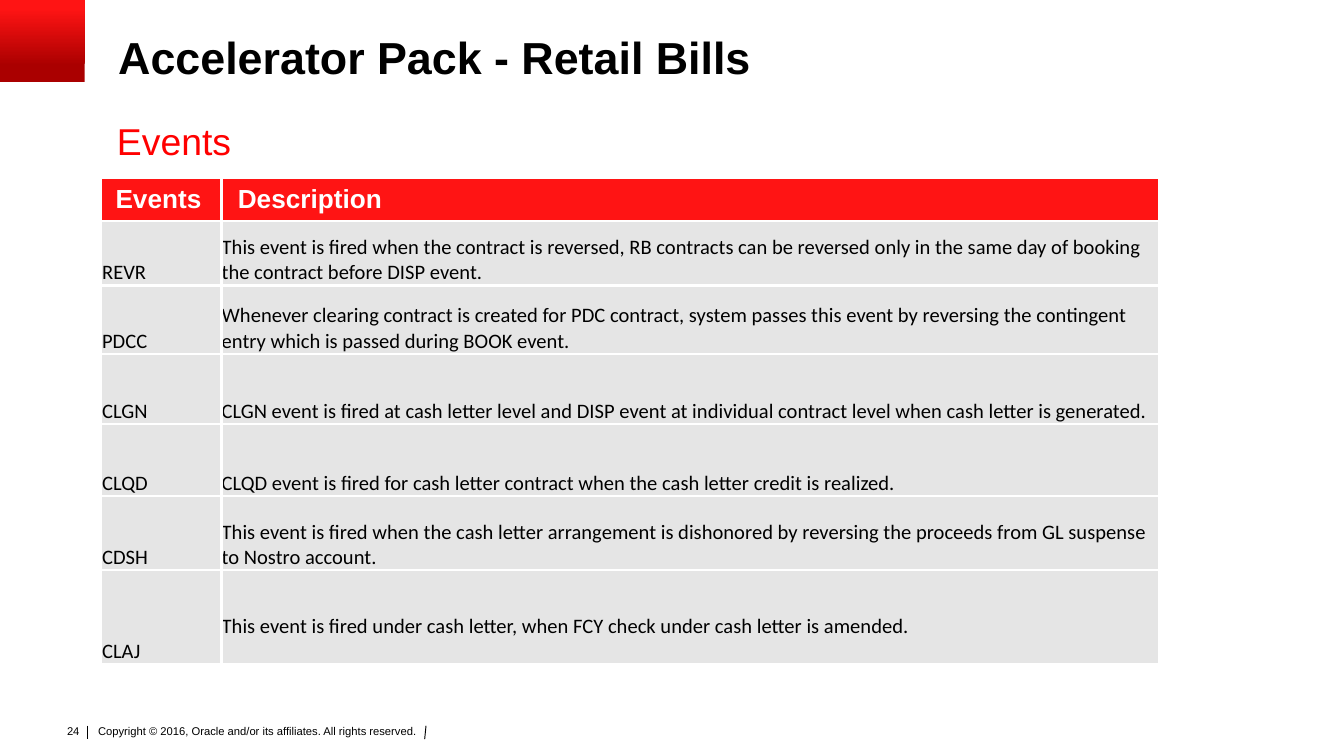
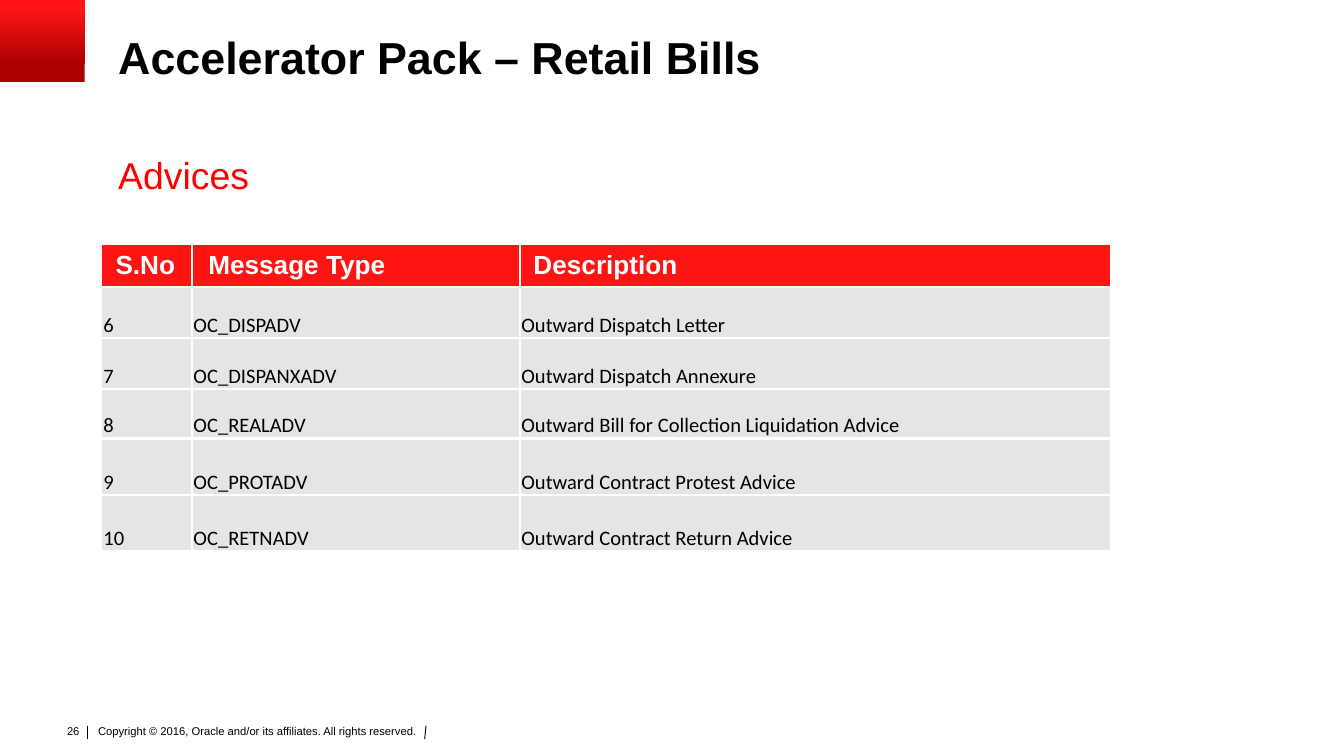
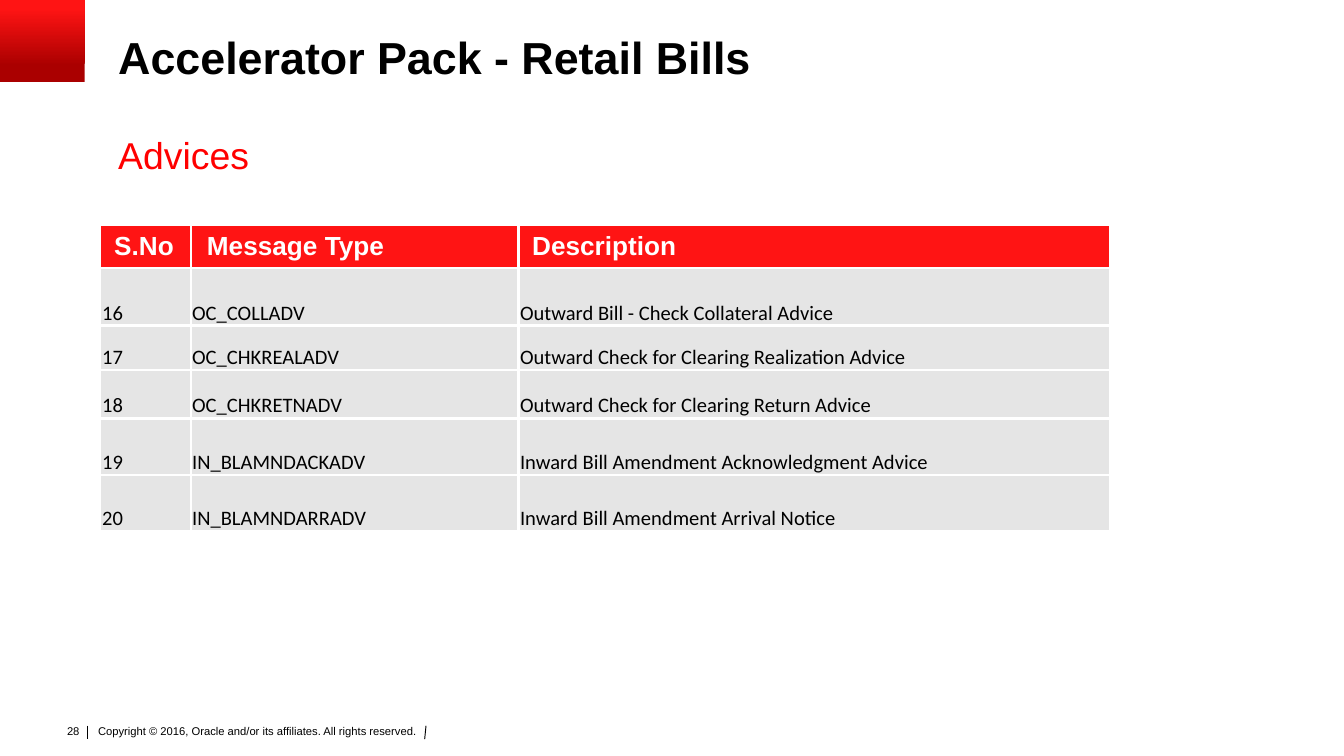
"""Build three Retail Bills slides, each with a heading and a table."""
from dataclasses import dataclass

from lxml import etree
from pptx import Presentation
from pptx.dml.color import RGBColor
from pptx.enum.shapes import MSO_CONNECTOR, MSO_SHAPE
from pptx.enum.text import MSO_ANCHOR, MSO_AUTO_SIZE, PP_ALIGN
from pptx.oxml.ns import qn
from pptx.util import Inches, Pt

STRAIGHT = MSO_CONNECTOR.STRAIGHT
RECTANGLE = MSO_SHAPE.RECTANGLE
MIDDLE, BOTTOM = MSO_ANCHOR.MIDDLE, MSO_ANCHOR.BOTTOM
FIT_SHAPE = MSO_AUTO_SIZE.SHAPE_TO_FIT_TEXT
LEFT, RIGHT = PP_ALIGN.LEFT, PP_ALIGN.RIGHT


@dataclass(frozen=True)
class TextStyle:
    size: float
    color: str
    font: str = "Arial"
    bold: bool = False


@dataclass(frozen=True)
class Theme:
    black: str = "000000"
    white: str = "FFFFFF"
    red: str = "FF1414"
    dark_red: str = "AA0000"
    gray: str = "E5E5E5"
    border_width: float = 1.5
    rule_width: float = 0.5
    title: TextStyle = TextStyle(24, "000000", bold=True)
    subtitle: TextStyle = TextStyle(20, "FF0000")
    header: TextStyle = TextStyle(14, "FFFFFF", bold=True)
    body: TextStyle = TextStyle(11, "000000", "Calibri")
    footer: TextStyle = TextStyle(6, "000000")


THEME = Theme()
COPYRIGHT = "Copyright © 2016, Oracle and/or its affiliates. All rights reserved."
ADVICE_HEADER = ("S.No", "Message Type", "Description")
ADVICE_COLUMNS = (0.67, 2.44, 4.4)
ADVICE_INSETS = (0.01, 0.01, 0.01, 0)
HEADER_INSETS = (0.1, 0.04, 0.1, 0.04)
NO_INSETS = (0, 0, 0, 0)

SLIDES = [
    {
        "number": "24",
        "title": "Accelerator Pack - Retail Bills",
        "subtitle": "Events",
        "subtitle_at": (0.87, 0.88),
        "table_at": (0.76, 1.33),
        "columns": (0.89, 6.97),
        "row_heights": (0.3, 0.48, 0.51, 0.52, 0.54, 0.55, 0.7),
        "insets": NO_INSETS,
        "open_right": True,
        "raised_cell": (6, 1),
        "rows": [
            ("Events", "Description"),
            ("REVR", "This event is fired when the contract is reversed, RB contracts can be "
                     "reversed only in the same day of booking the contract before DISP event."),
            ("PDCC", "Whenever clearing contract is created for PDC contract, system passes this "
                     "event by reversing the contingent entry which is passed during BOOK event."),
            ("CLGN", "CLGN event is fired at cash letter level and DISP event at individual "
                     "contract level when cash letter is generated."),
            ("CLQD", "\nCLQD event is fired for cash letter contract when the cash letter credit "
                     "is realized."),
            ("CDSH", "This event is fired when the cash letter arrangement is dishonored by "
                     "reversing the proceeds from GL suspense to Nostro account."),
            ("CLAJ", "This event is fired under cash letter, when FCY check under cash letter "
                     "is amended."),
        ],
    },
    {
        "number": "26",
        "title": "Accelerator Pack – Retail Bills",
        "subtitle": "Advices",
        "subtitle_at": (0.88, 1.13),
        "table_at": (0.76, 1.82),
        "columns": ADVICE_COLUMNS,
        "row_heights": (0.31, 0.38, 0.38, 0.37, 0.42, 0.42),
        "insets": ADVICE_INSETS,
        "rows": [
            ADVICE_HEADER,
            ("6", "OC_DISPADV", "Outward Dispatch Letter"),
            ("7", "OC_DISPANXADV", "Outward Dispatch Annexure"),
            ("8", "OC_REALADV", "Outward Bill for Collection Liquidation Advice"),
            ("9", "OC_PROTADV", "Outward Contract Protest Advice"),
            ("10", "OC_RETNADV", "Outward Contract Return Advice"),
        ],
    },
    {
        "number": "28",
        "title": "Accelerator Pack - Retail Bills",
        "subtitle": "Advices",
        "subtitle_at": (0.88, 0.98),
        "table_at": (0.75, 1.68),
        "columns": ADVICE_COLUMNS,
        "row_heights": (0.31, 0.43, 0.33, 0.36, 0.42, 0.42),
        "insets": ADVICE_INSETS,
        "rows": [
            ADVICE_HEADER,
            ("16", "OC_COLLADV", "Outward Bill - Check Collateral Advice"),
            ("17", "OC_CHKREALADV", "Outward Check for Clearing Realization Advice"),
            ("18", "OC_CHKRETNADV", "Outward Check for Clearing Return Advice"),
            ("19", "IN_BLAMNDACKADV", "Inward Bill Amendment Acknowledgment Advice"),
            ("20", "IN_BLAMNDARRADV", "Inward Bill Amendment Arrival Notice"),
        ],
    },
]


def rgb(color):
    return RGBColor.from_string(color)


def set_insets(target, insets):
    for side, inset in zip(("left", "top", "right", "bottom"), insets):
        setattr(target, f"margin_{side}", Inches(inset))


def write_text(frame, text, style, align=LEFT):
    paragraph = frame.paragraphs[0]
    paragraph.alignment = align
    if text.startswith("\n"):
        paragraph.font.size = Pt(style.size)
        paragraph.add_line_break()
    run = paragraph.add_run()
    run.text = text.lstrip("\n")
    run.font.name = style.font
    run.font.size = Pt(style.size)
    run.font.bold = style.bold
    run.font.color.rgb = rgb(style.color)
    return paragraph


def add_text(slide, box, text, style, insets=NO_INSETS, align=LEFT):
    frame = slide.shapes.add_textbox(*map(Inches, box)).text_frame
    frame.word_wrap = True
    set_insets(frame, insets)
    return frame, write_text(frame, text, style, align)


def add_footer(slide, number):
    add_text(slide, (0.69, 5.37, 2.74, 0.24), COPYRIGHT, THEME.footer, (0.04, 0.02, 0.04, 0.02))
    for top_x, bottom_x in ((0.65, 0.65), (3.17, 3.16)):
        rule = slide.shapes.add_connector(STRAIGHT, *map(Inches, (top_x, 5.4, bottom_x, 5.5)))
        rule.line.color.rgb = rgb(THEME.black)
        rule.line.width = Pt(THEME.rule_width)
        etree.SubElement(rule._element.spPr, qn("a:effectLst"))
    frame, _ = add_text(slide, (0.39, 5.34, 0.3, 0.2), number, THEME.footer,
                        (0.1, 0.05, 0.1, 0.05), RIGHT)
    frame.word_wrap = False
    frame.auto_size = FIT_SHAPE


def add_corner(slide):
    corner = slide.shapes.add_shape(RECTANGLE, *map(Inches, (0, 0, 0.63, 0.61)))
    corner.shadow.inherit = False
    corner.line.fill.background()
    corner.fill.gradient()
    corner.fill.gradient_angle = 90
    colors = ((0.2, THEME.dark_red), (0.9, THEME.red))
    for stop, (position, color) in zip(corner.fill.gradient_stops, colors):
        stop.position = position
        stop.color.rgb = rgb(color)


def add_borders(cell, open_sides):
    properties = cell._tc.get_or_add_tcPr()
    for side in "LRTB":
        border = etree.SubElement(properties, qn(f"a:ln{side}"), w=str(Pt(THEME.border_width)))
        if side in open_sides:
            etree.SubElement(border, qn("a:noFill"))
        else:
            fill = etree.SubElement(border, qn("a:solidFill"))
            etree.SubElement(fill, qn("a:srgbClr"), val=THEME.white)


def fill_cell(cell, text, is_header, insets):
    cell.fill.solid()
    cell.fill.fore_color.rgb = rgb(THEME.red if is_header else THEME.gray)
    cell.vertical_anchor = MIDDLE if is_header else BOTTOM
    set_insets(cell, HEADER_INSETS if is_header else insets)
    return write_text(cell.text_frame, text, THEME.header if is_header else THEME.body)


def add_content_table(slide, content):
    rows, columns, heights = content["rows"], content["columns"], content["row_heights"]
    box = (*content["table_at"], sum(columns), sum(heights))
    table = slide.shapes.add_table(len(rows), len(columns), *map(Inches, box)).table
    table.horz_banding = False
    for column, width in zip(table.columns, columns):
        column.width = Inches(width)
    for row, height in zip(table.rows, heights):
        row.height = Inches(height)
    for row_index, row in enumerate(rows):
        for column_index, text in enumerate(row):
            cell = table.cell(row_index, column_index)
            is_open = {
                "L": column_index == 0,
                "T": row_index == 0,
                "R": content.get("open_right", False) and column_index == len(columns) - 1,
            }
            add_borders(cell, [side for side, value in is_open.items() if value])
            paragraph = fill_cell(cell, text, row_index == 0, content["insets"])
            if (row_index, column_index) == (0, 1):
                paragraph._p.get_or_add_pPr().set("marL", str(Inches(0.02)))
            if (row_index, column_index) == content.get("raised_cell"):
                cell.margin_bottom = Inches(0.19)


def add_slide(presentation, content):
    slide = presentation.slides.add_slide(presentation.slide_layouts[6])
    slide.background.fill.solid()
    slide.background.fill.fore_color.rgb = rgb(THEME.white)
    add_footer(slide, content["number"])
    add_corner(slide)
    add_text(slide, (*content["subtitle_at"], 9, 0.33), content["subtitle"], THEME.subtitle)
    _, title = add_text(slide, (0.88, 0.27, 8.5, 0.5), content["title"], THEME.title)
    title.line_spacing = 0.9
    add_content_table(slide, content)


def main():
    presentation = Presentation()
    presentation.slide_width = Inches(10)
    presentation.slide_height = presentation.slide_width * 9 // 16
    for content in SLIDES:
        add_slide(presentation, content)
    presentation.save("out.pptx")


if __name__ == "__main__":
    main()
